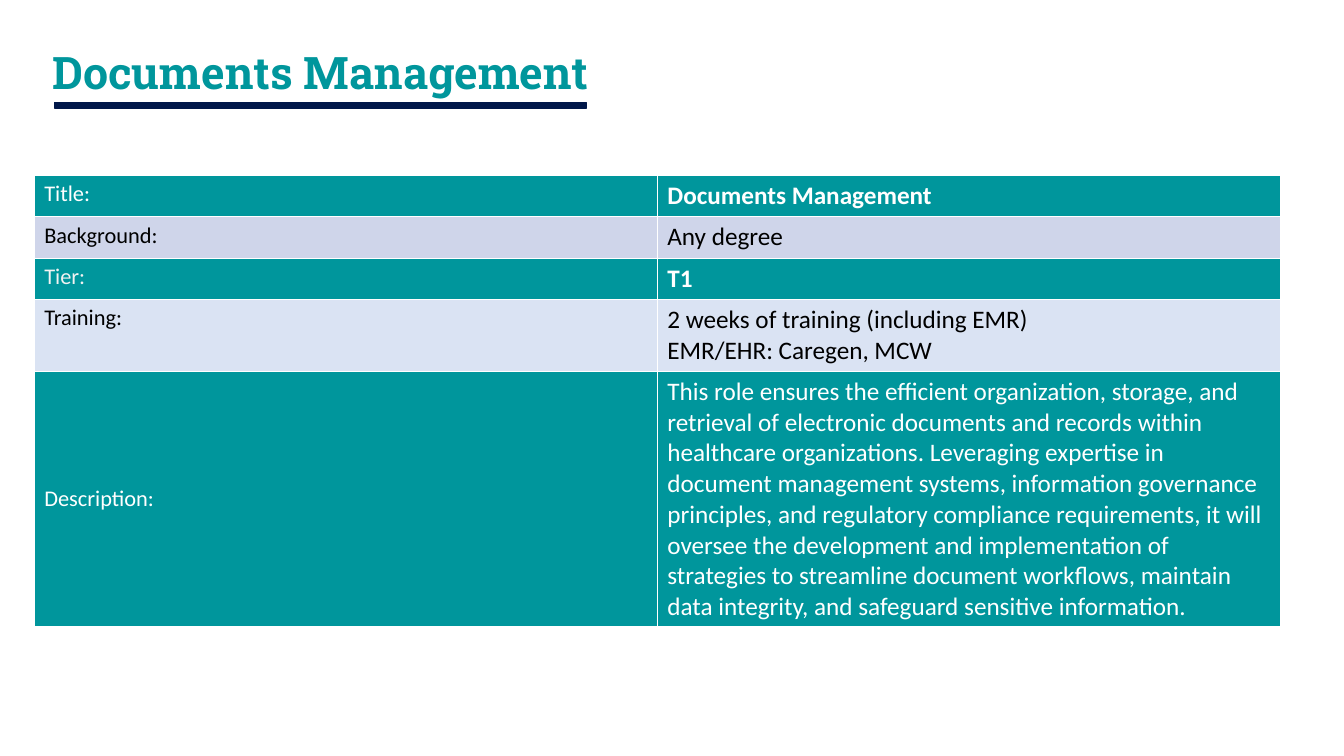
import pptx
import pptx.dml.color
import pptx.enum.shapes
import pptx.enum.text
import pptx.util

TEAL, NAVY, WHITE, BLACK = "00969C", "001749", "FFFFFF", "000000"
LAVENDER, PALE_BLUE, LIGHT_GREY = "CFD5EA", "DAE3F3", "F2F2F2"
MIDDLE = pptx.enum.text.MSO_ANCHOR.MIDDLE
TOP = pptx.enum.text.MSO_ANCHOR.TOP


def color(hex_string):
    return pptx.dml.color.RGBColor.from_string(hex_string)


class RoleSlide:
    """Places elements by percentages of the slide's width and height."""

    heading_font = "Roboto Slab"
    body_font = "Calibri"
    label_size, value_size = 16, 18

    def __init__(self, presentation):
        self.width = presentation.slide_width
        self.height = presentation.slide_height
        self.slide = presentation.slides.add_slide(presentation.slide_layouts[6])

    def across(self, percent):
        return round(self.width * percent / 100)

    def down(self, percent):
        return round(self.height * percent / 100)

    def box(self, left, top, width, height):
        return self.across(left), self.down(top), self.across(width), self.down(height)

    def set_text(self, text_frame, text, name, size, text_color, bold):
        text_frame.text = text
        for paragraph in text_frame.paragraphs:
            paragraph.font.name = name
            paragraph.font.size = pptx.util.Pt(size)
            paragraph.font.bold = bold
            paragraph.font.color.rgb = color(text_color)

    def heading(self, text, *place):
        text_frame = self.slide.shapes.add_textbox(*self.box(*place)).text_frame
        text_frame.word_wrap = True
        text_frame.vertical_anchor = MIDDLE
        self.set_text(text_frame, text, self.heading_font, 32, TEAL, True)
        text_frame.paragraphs[0].line_spacing = 0.9

    def bar(self, *place):
        shape = self.slide.shapes.add_shape(
            pptx.enum.shapes.MSO_SHAPE.RECTANGLE, *self.box(*place))
        shape.shadow.inherit = False
        shape.fill.solid()
        shape.fill.fore_color.rgb = color(NAVY)
        shape.line.color.rgb = color(NAVY)
        shape.line.width = pptx.util.Pt(1)

    def table(self, rows, left, top, width):
        total_height = sum(row[0] for row in rows)
        table = self.slide.shapes.add_table(
            len(rows), 2, *self.box(left, top, width, total_height)).table
        for index, (height, fill, label, label_color, value, value_color, bold, anchor) in enumerate(rows):
            table.rows[index].height = self.down(height)
            label_cell, value_cell = table.rows[index].cells
            label_cell.vertical_anchor = anchor
            for cell in (label_cell, value_cell):
                cell.fill.solid()
                cell.fill.fore_color.rgb = color(fill)
            self.set_text(label_cell.text_frame, label, self.body_font,
                          self.label_size, label_color, False)
            self.set_text(value_cell.text_frame, value, self.body_font,
                          self.value_size, value_color, bold)


DESCRIPTION = (
    "This role ensures the efficient organization, storage, and retrieval of "
    "electronic documents and records within healthcare organizations. "
    "Leveraging expertise in document management systems, information governance "
    "principles, and regulatory compliance requirements, it will oversee the "
    "development and implementation of strategies to streamline document "
    "workflows, maintain data integrity, and safeguard sensitive information."
)

# Height, fill, label, label colour, value, value colour, bold value, label anchor
LINE = 5.47
ROLE_ROWS = [
    (LINE, TEAL, "Title:", WHITE, "Documents Management", WHITE, True, TOP),
    (LINE, LAVENDER, "Background:", BLACK, "Any degree", BLACK, False, TOP),
    (LINE, TEAL, "Tier:", LIGHT_GREY, "T1", WHITE, True, TOP),
    (9.5, PALE_BLUE, "Training:", BLACK,
     "2 weeks of training (including EMR)\nEMR/EHR: Caregen, MCW", BLACK, False, TOP),
    (33.8, TEAL, "Description:", WHITE, DESCRIPTION, WHITE, False, MIDDLE),
]


def main():
    presentation = pptx.Presentation()
    presentation.slide_width = pptx.util.Inches(13.33)
    presentation.slide_height = pptx.util.Inches(7.5)
    role = RoleSlide(presentation)

    # Heading with its underline
    role.heading("Documents Management", 3.15, 0, 58.44, 19.73)
    role.bar(4.05, 13.6, 39.61, 0.67)

    # Role details
    role.table(ROLE_ROWS, 2.55, 23.2, 92.72)

    presentation.save("out.pptx")


if __name__ == "__main__":
    main()
